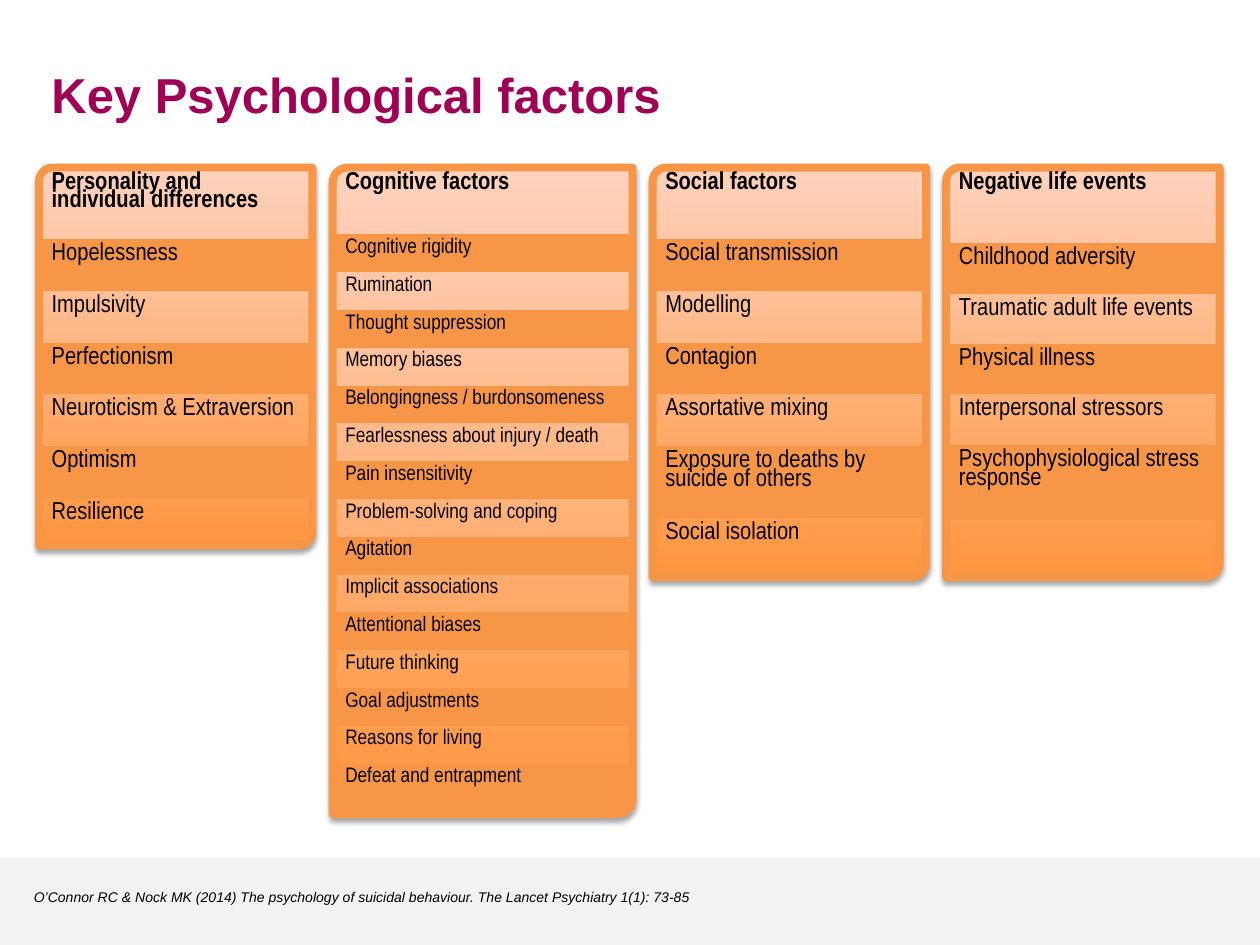
from dataclasses import dataclass

from lxml.etree import SubElement
from pptx import Presentation
from pptx.dml.color import RGBColor
from pptx.enum.shapes import MSO_SHAPE
from pptx.oxml.ns import qn
from pptx.slide import Slide
from pptx.text.text import Font
from pptx.util import Inches, Pt

ORANGE = "F79646"
BLACK = "000000"
PANEL_TOP = 1.33
PANEL_GAP = 0.16
PLAIN_TABLE_STYLE = "{2D5ABB26-0587-4C30-8999-92F81FD0307C}"


@dataclass
class FactorPanel:
    width: float
    height: float
    heading: str
    factors: list[str]
    heading_height: float
    row_height: float
    tall_rows: dict[int, float]
    size: int = 14


PANELS = [
    FactorPanel(2.17, 3, "Personality and individual differences",
                ["Hopelessness", "Impulsivity", "Perfectionism",
                 "Neuroticism & Extraversion", "Optimism", "Resilience"],
                0.57, 0.41, {}),
    FactorPanel(2.38, 5.13, "Cognitive factors",
                ["Cognitive rigidity", "Rumination", "Thought suppression",
                 "Memory biases", "Belongingness / burdonsomeness",
                 "Fearlessness about injury / death", "Pain insensitivity",
                 "Problem-solving and coping", "Agitation",
                 "Implicit associations", "Attentional biases",
                 "Future thinking", "Goal adjustments",
                 "Reasons for living", "Defeat and entrapment"],
                0.53, 0.3, {14: 0.37}, 12),
    FactorPanel(2.17, 3.25, "Social factors",
                ["Social transmission", "Modelling", "Contagion",
                 "Assortative mixing", "Exposure to deaths by suicide of others",
                 "Social isolation"],
                0.57, 0.41, {4: 0.57}),
    FactorPanel(2.17, 3.25, "Negative life events",
                ["Childhood adversity", "Traumatic adult life events",
                 "Physical illness", "Interpersonal stressors",
                 "Psychophysiological stress response"],
                0.6, 0.4, {4: 0.6}),
]


def colour(value: str) -> RGBColor:
    return RGBColor.from_string(value)


def set_font(font: Font, name: str, size: int, shade: str = BLACK,
             bold: bool = False, italic: bool = False) -> None:
    font.name = name
    font.size = Pt(size)
    font.color.rgb = colour(shade)
    font.bold = bold
    font.italic = italic


def add_text(page: Slide, left: float, top: float, width: float, height: float,
             text: str, size: int, **style) -> None:
    box = page.shapes.add_textbox(Inches(left), Inches(top), Inches(width), Inches(height))
    box.text_frame.word_wrap = True
    para = box.text_frame.paragraphs[0]
    para.text = text
    set_font(para.font, "Arial", size, **style)


def add_footer_band(page: Slide) -> None:
    band = page.shapes.add_shape(MSO_SHAPE.RECTANGLE, Inches(0), Inches(6.81),
                                 Inches(10), Inches(0.69))
    band.shadow.inherit = False
    band.fill.solid()
    band.fill.fore_color.rgb = colour("F2F2F2")
    band.line.fill.background()


def add_backing(page: Slide, left: float, panel: FactorPanel) -> None:
    backing = page.shapes.add_shape(MSO_SHAPE.ROUND_2_DIAG_RECTANGLE, Inches(left),
                                    Inches(PANEL_TOP), Inches(panel.width),
                                    Inches(panel.height))
    backing.adjustments[0] = 0.05
    backing.adjustments[1] = 0
    backing.fill.gradient()
    backing.fill.gradient_angle = 90
    for stop, shade in zip(backing.fill.gradient_stops, ("FF953E", "FFD2BD")):
        stop.color.rgb = colour(shade)
    backing.line.color.rgb = colour(ORANGE)
    backing.line.width = Pt(4.5)
    backing.shadow.inherit = False
    effects = backing._element.spPr.find(qn("a:effectLst"))
    shadow = SubElement(effects, qn("a:outerShdw"), blurRad=str(Pt(3.1)),
                        dist=str(Pt(1.8)), dir="5400000", rotWithShape="0")
    shadow_colour = SubElement(shadow, qn("a:srgbClr"), val=BLACK)
    SubElement(shadow_colour, qn("a:alpha"), val="35000")


def add_factor_table(page: Slide, left: float, panel: FactorPanel) -> None:
    heights = [panel.heading_height] + [
        panel.tall_rows.get(index, panel.row_height) for index in range(len(panel.factors))]
    table = page.shapes.add_table(len(heights), 1, Inches(left), Inches(PANEL_TOP),
                                  Inches(panel.width), Inches(sum(heights))).table
    table.first_row = False
    table.horz_banding = False
    table._tbl.tblPr.find(qn("a:tableStyleId")).text = PLAIN_TABLE_STYLE
    for index, text in enumerate([panel.heading, *panel.factors]):
        table.rows[index].height = Inches(heights[index])
        cell = table.cell(index, 0)
        if index % 2:
            cell.fill.solid()
            cell.fill.fore_color.rgb = colour(ORANGE)
        else:
            cell.fill.background()
        para = cell.text_frame.paragraphs[0]
        para.text = text
        para.line_spacing = 0.82
        is_heading = index == 0
        set_font(para.font, "Arial Narrow", 14 if is_heading else panel.size,
                 bold=is_heading)


def main() -> None:
    deck = Presentation()
    deck.slide_width = Inches(10)
    deck.slide_height = Inches(7.5)
    page = deck.slides.add_slide(deck.slide_layouts[6])
    add_footer_band(page)
    add_text(page, 0.31, 0.46, 5.59, 0.54, "Key Psychological factors", 28,
             shade="A00054", bold=True)
    add_text(page, 0.17, 7, 8.36, 0.24,
             "O’Connor RC & Nock MK (2014) The psychology of suicidal behaviour. "
             "The Lancet Psychiatry 1(1): 73-85", 8, italic=True)
    left = 0.31
    for panel in PANELS:
        add_backing(page, left, panel)
        add_factor_table(page, left, panel)
        left += panel.width + PANEL_GAP
    deck.save("out.pptx")


if __name__ == "__main__":
    main()
